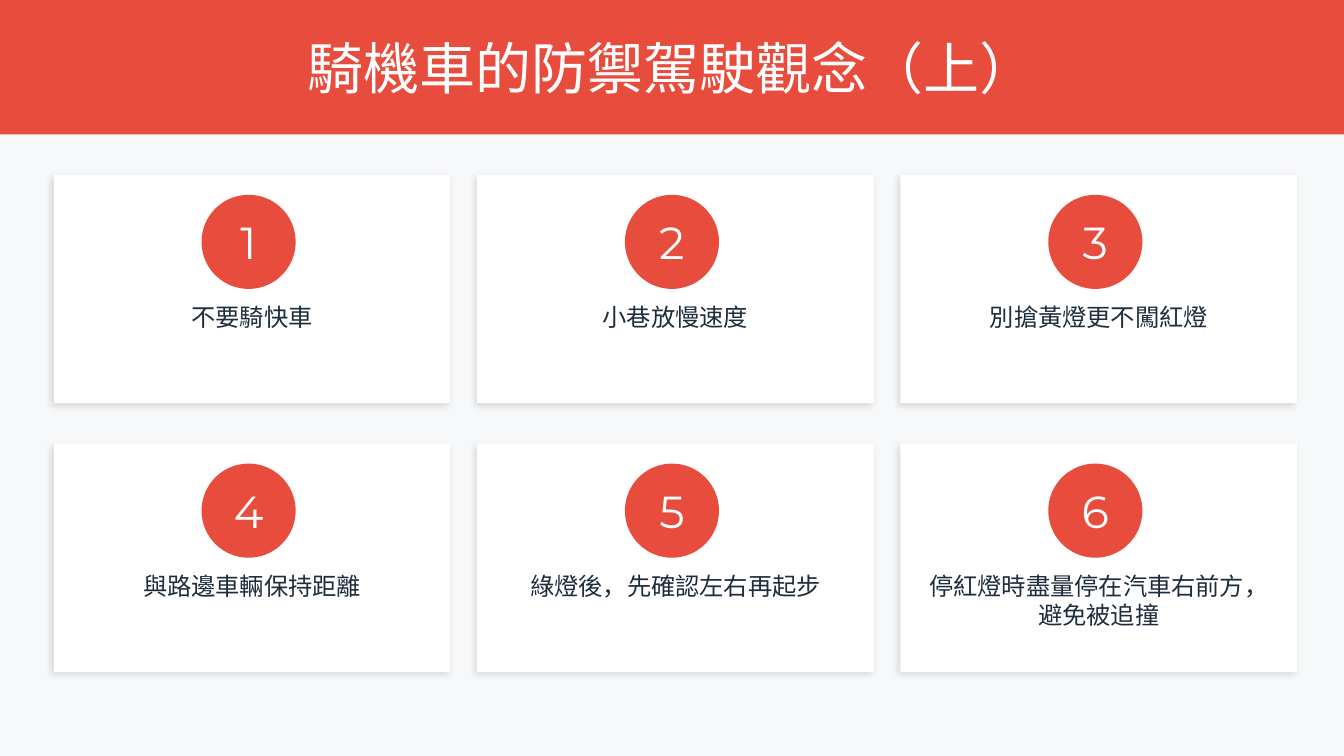
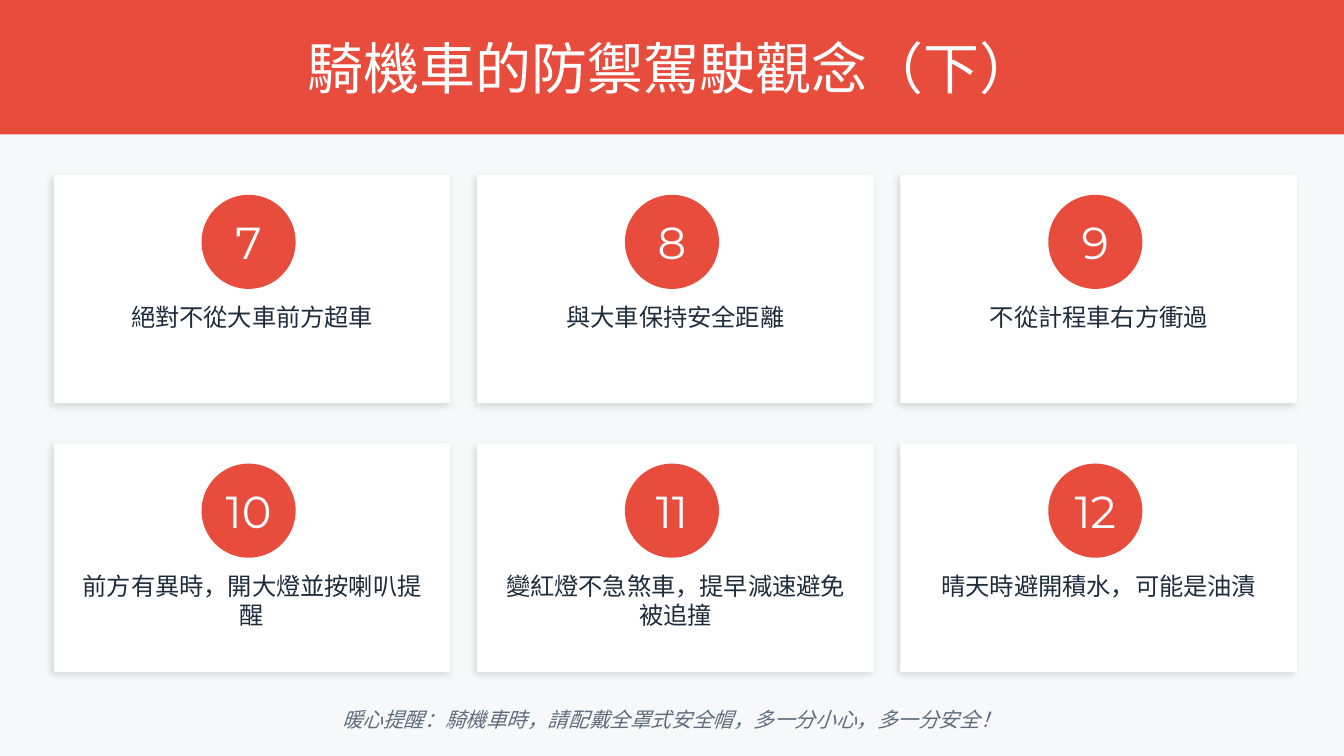
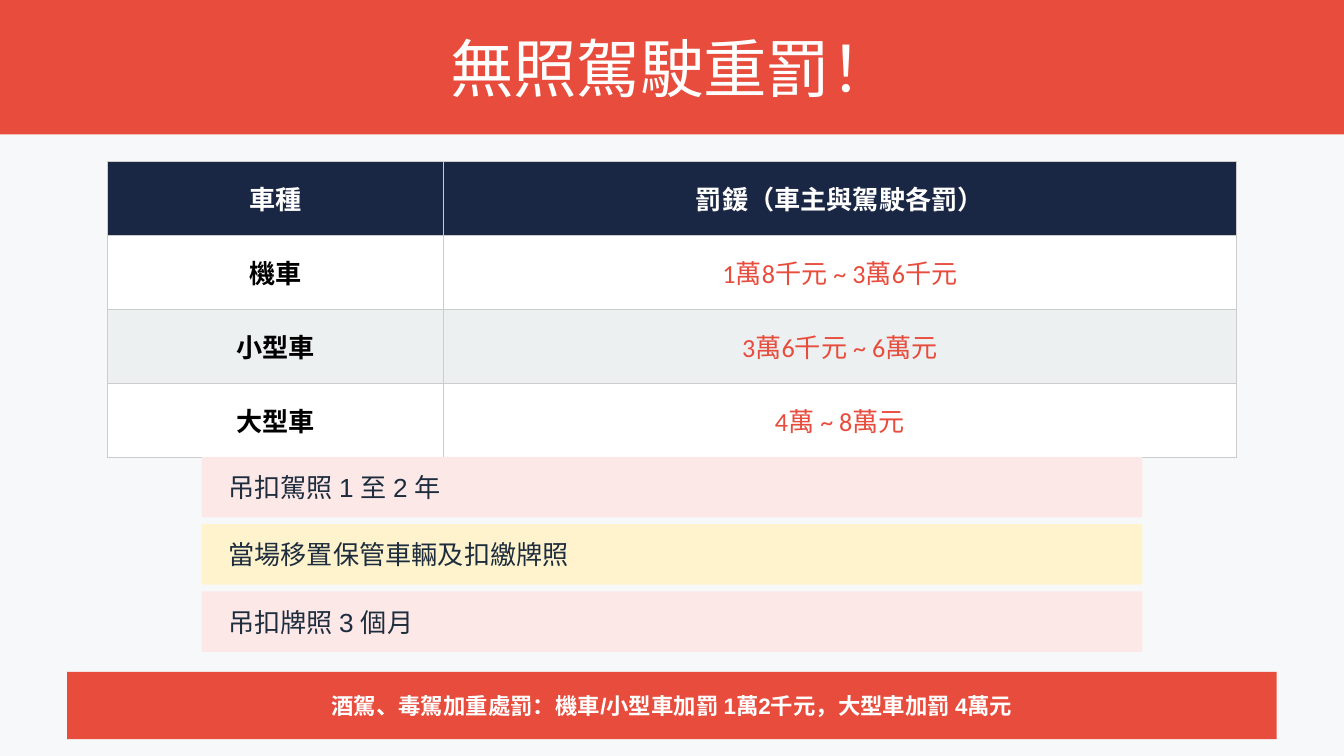
from lxml.etree import SubElement
from pptx import Presentation
from pptx.dml.color import RGBColor
from pptx.enum.shapes import MSO_SHAPE
from pptx.enum.text import MSO_ANCHOR, PP_ALIGN
from pptx.oxml import parse_xml
from pptx.oxml.ns import nsdecls, qn
from pptx.util import Inches, Pt

# Shared look
HUE = {
    "page": "F7F8FA", "red": "E74C3C", "white": "FFFFFF", "ink": "1E2D3D",
    "note": "5D6D7E", "navy": "1A2744", "gray": "ECF0F1", "black": "000000",
    "rule": "CCCCCC", "pink": "FDE8E8", "cream": "FFF3CD",
}
HEAD, BODY, GRID = "Montserrat", "Arial", "Calibri"
SHADE = f"""<a:effectLst {nsdecls("a")}>
  <a:outerShdw blurRad="{Pt(4)}" dist="{Pt(2)}" dir="{135 * 60000}" algn="bl" rotWithShape="0">
    <a:srgbClr val="{HUE["black"]}"><a:alpha val="12000"/></a:srgbClr>
  </a:outerShdw>
</a:effectLst>"""


def block(slide, kind, at, fill):
    shape = slide.shapes.add_shape(kind, *map(Inches, at))
    shape.shadow.inherit = False
    shape.fill.solid()
    shape.fill.fore_color.rgb = RGBColor.from_string(HUE[fill])
    shape.line.fill.background()
    return shape


def write(frame, text, size, hue, face=BODY, align=PP_ALIGN.CENTER,
          anchor=MSO_ANCHOR.MIDDLE, bold=False):
    frame.word_wrap = True
    frame.vertical_anchor = anchor
    frame.margin_left = frame.margin_right = 0
    frame.margin_top = frame.margin_bottom = 0
    line = frame.paragraphs[0]
    line.text = text
    line.alignment = align
    line.font.size = Pt(size)
    line.font.name = face
    line.font.bold = bold
    line.font.color.rgb = RGBColor.from_string(HUE[hue])
    return line


# Widescreen, 16 to 9
deck = Presentation()
deck.slide_width, deck.slide_height = Inches(10), Inches(10 * 9 / 16)

# Backgrounds and title bands
slides = []
for title, size in [("騎機車的防禦駕駛觀念（上）", 30),
                    ("騎機車的防禦駕駛觀念（下）", 30),
                    ("無照駕駛重罰！", 34)]:
    slide = deck.slides.add_slide(deck.slide_layouts[6])
    slide.background.fill.solid()
    slide.background.fill.fore_color.rgb = RGBColor.from_string(HUE["page"])
    block(slide, MSO_SHAPE.RECTANGLE, (0, 0, 10, 1), "red")
    box = slide.shapes.add_textbox(*map(Inches, (0.5, 0.1, 9, 0.8)))
    write(box.text_frame, title, size, "white", HEAD)
    slides.append(slide)
first, second, third = slides

# Numbered cards, six to a slide
tips = [
    "不要騎快車", "小巷放慢速度", "別搶黃燈更不闖紅燈",
    "與路邊車輛保持距離", "綠燈後，先確認左右再起步", "停紅燈時盡量停在汽車右前方，避免被追撞",
    "絕對不從大車前方超車", "與大車保持安全距離", "不從計程車右方衝過",
    "前方有異時，開大燈並按喇叭提醒", "變紅燈不急煞車，提早減速避免被追撞", "晴天時避開積水，可能是油漬",
]
for i, tip in enumerate(tips):
    slide = slides[i // 6]
    row, col = divmod(i % 6, 3)
    x, y = 0.4 + 3.15 * col, 1.3 + 2 * row
    card = block(slide, MSO_SHAPE.RECTANGLE, (x, y, 2.95, 1.7), "white")
    props = card.fill._xPr
    props.replace(props.find(qn("a:effectLst")), parse_xml(SHADE))
    spot = (x + 1.1, y + 0.15, 0.7, 0.7)
    block(slide, MSO_SHAPE.OVAL, spot, "red")
    box = slide.shapes.add_textbox(*map(Inches, spot))
    write(box.text_frame, str(i + 1), 24, "white", HEAD)
    box = slide.shapes.add_textbox(*map(Inches, (x + 0.2, y + 0.95, 2.55, 0.65)))
    write(box.text_frame, tip, 13, "ink", anchor=MSO_ANCHOR.TOP)

# Closing reminder
box = second.shapes.add_textbox(*map(Inches, (0.5, 5.15, 9, 0.4)))
note = write(box.text_frame, "暖心提醒：騎機車時，請配戴全罩式安全帽，多一分小心，多一分安全！", 11, "note")
note.font.italic = True

# Table of fines
fines = [
    ("車種", "罰鍰（車主與駕駛各罰）"),
    ("機車", "1萬8千元 ~ 3萬6千元"),
    ("小型車", "3萬6千元 ~ 6萬元"),
    ("大型車", "4萬 ~ 8萬元"),
]
table = third.shapes.add_table(4, 2, *map(Inches, (0.8, 1.2, 8.4, 2.2))).table
table.columns[0].width, table.columns[1].width = Inches(2.5), Inches(5.9)
for r, pair in enumerate(fines):
    for c, text in enumerate(pair):
        cell = table.cell(r, c)
        hue = "white" if r == 0 else ("black", "red")[c]
        write(cell.text_frame, text, 14, hue, GRID, bold=r == 0 or c == 0)
        cell.vertical_anchor = MSO_ANCHOR.MIDDLE
        props = cell._tc.get_or_add_tcPr()
        for side in ("lnL", "lnR", "lnT", "lnB"):
            edge = SubElement(props, qn(f"a:{side}"), w=str(Pt(0.5)))
            SubElement(SubElement(edge, qn("a:solidFill")), qn("a:srgbClr"), val=HUE["rule"])
        cell.fill.solid()
        fill = ("navy", "white", "gray", "white")[r]
        cell.fill.fore_color.rgb = RGBColor.from_string(HUE[fill])

# Further penalties
for i, (text, fill) in enumerate([("吊扣駕照 1 至 2 年", "pink"),
                                  ("當場移置保管車輛及扣繳牌照", "cream"),
                                  ("吊扣牌照 3 個月", "pink")]):
    y = 3.4 + 0.5 * i
    block(third, MSO_SHAPE.RECTANGLE, (1.5, y, 7, 0.45), fill)
    box = third.shapes.add_textbox(*map(Inches, (1.7, y, 6.6, 0.45)))
    write(box.text_frame, text, 14, "ink", align=PP_ALIGN.LEFT)

# Warning bar
block(third, MSO_SHAPE.RECTANGLE, (0.5, 5, 9, 0.5), "red")
box = third.shapes.add_textbox(*map(Inches, (0.7, 5, 8.6, 0.5)))
write(box.text_frame, "酒駕、毒駕加重處罰：機車/小型車加罰 1萬2千元，大型車加罰 4萬元", 12, "white", bold=True)

deck.save("out.pptx")
